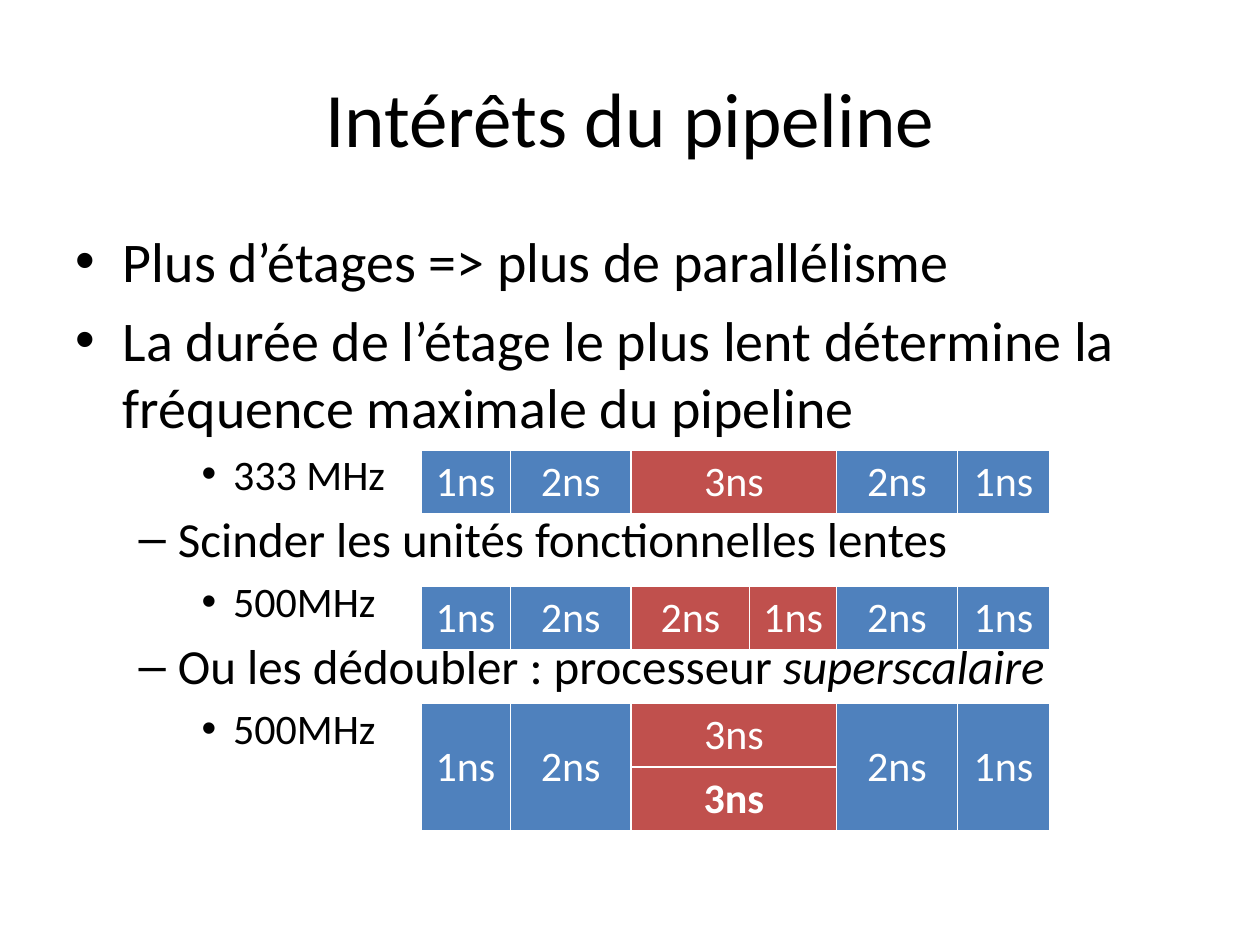
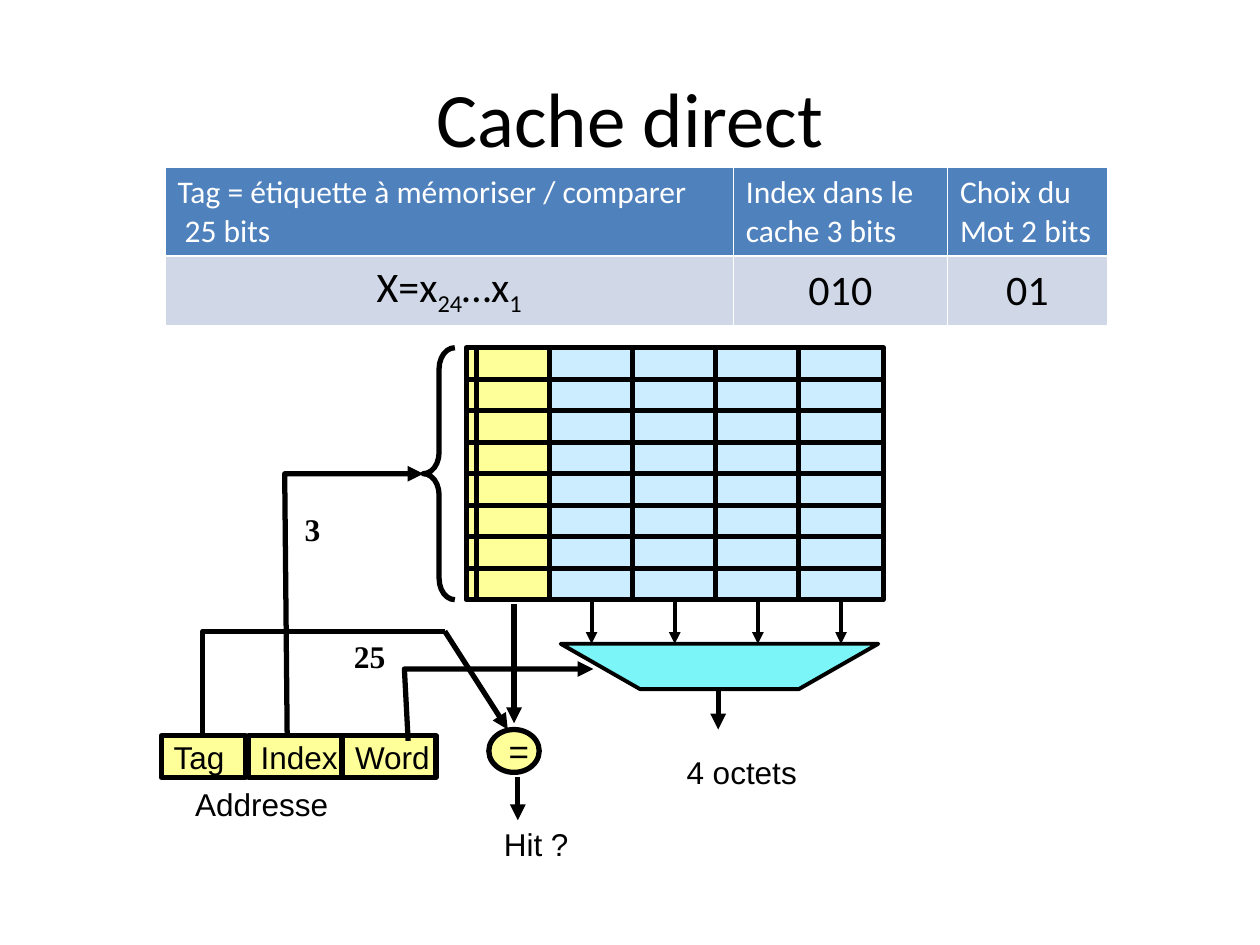
from lxml import etree
from pptx import Presentation
from pptx.dml.color import RGBColor
from pptx.enum import shapes, text
from pptx.oxml.ns import qn
from pptx.util import Inches, Pt

rgb = RGBColor.from_string
BLACK, WHITE = "000000", "FFFFFF"
BLUE, RED, PALE = "4F81BD", "C0504D", "D0D8E8"
YELLOW, SKY, CYAN = "FFFF99", "CCECFF", "7CF5F8"
RECT = shapes.MSO_SHAPE.RECTANGLE
CENTER, LEFT = text.PP_ALIGN.CENTER, text.PP_ALIGN.LEFT


def draw(s, fill=None, width=3, arrow=False):
    """Black outline, optional fill and arrowhead, no shadow."""
    s.line.color.rgb = rgb(BLACK)
    s.line.width = Pt(width)
    if fill:
        s.fill.solid()
        s.fill.fore_color.rgb = rgb(fill)
    elif hasattr(s, "fill"):
        s.fill.background()
    spPr = s._element.spPr
    if arrow:
        etree.SubElement(spPr.find(qn("a:ln")), qn("a:tailEnd"), type="triangle")
    etree.SubElement(spPr, qn("a:effectLst"))


def set_cell(cell, content, fill, size=24, color=WHITE, align=CENTER, bold=False):
    cell.fill.solid()
    cell.fill.fore_color.rgb = rgb(fill)
    cell.vertical_anchor = text.MSO_ANCHOR.MIDDLE
    cell.text_frame.text = content
    for p in cell.text_frame.paragraphs:
        p.alignment = align
        p.font.name, p.font.size, p.font.bold = "Calibri", Pt(size), bold
        p.font.color.rgb = rgb(color)


prs = Presentation()
prs.slide_width, prs.slide_height = Inches(10), Inches(7.5)

# Slides and their titles
pipeline = prs.slides.add_slide(prs.slide_layouts[1])
cache = prs.slides.add_slide(prs.slide_layouts[5])
for slide, title in ((pipeline, "Intérêts du pipeline"), (cache, "Cache direct")):
    s = slide.shapes.title
    s.left, s.top, s.width, s.height = Inches(0.5), Inches(0.3), Inches(9), Inches(1.25)
    s.text_frame.text = title
    p = s.text_frame.paragraphs[0]
    p.alignment = CENTER
    p.font.name, p.font.size = "Calibri", Pt(44)
    p.font.color.rgb = rgb(BLACK)

# Slide 1: bullets
body = pipeline.placeholders[1]
body.left, body.top, body.width, body.height = Inches(0.5), Inches(1.75), Inches(9), Inches(4.95)
tf = body.text_frame
bullets = [
    (0, "Plus d’étages => plus de parallélisme"),
    (0, "La durée de l’étage le plus lent détermine la fréquence maximale du pipeline"),
    (2, "333 MHz"),
    (1, "Scinder les unités fonctionnelles lentes"),
    (2, "500MHz"),
    (1, "Ou les dédoubler : processeur "),
    (2, "500MHz"),
]
for i, (level, content) in enumerate(bullets):
    p = tf.add_paragraph() if i else tf.paragraphs[0]
    p.level = level
    p.add_run().text = content
    p.font.name, p.font.size = "Calibri", Pt(32 - 4 * level)
    p.font.color.rgb = rgb(BLACK)
r = tf.paragraphs[5].add_run()
r.text = "superscalaire"
r.font.italic = True

# Slide 1: stage durations, with the slow stages in red
whole = [0.71, 0.96, 1.63, 0.96, 0.73]
split = [0.71, 0.96, 0.94, 0.69, 0.96, 0.73]
pipelines = [
    (3.57, whole, ["1ns", "2ns", "3ns", "2ns", "1ns"], 1),
    (4.65, split, ["1ns", "2ns", "2ns", "1ns", "2ns", "1ns"], 1),
    (5.58, whole, ["1ns", "2ns", "3ns", "2ns", "1ns"], 2),
]
for top, widths, stages, rows in pipelines:
    table = pipeline.shapes.add_table(rows, len(widths), Inches(3.34), Inches(top),
                                      Inches(sum(widths)), Inches(0.5 * rows)).table
    for col, (width, stage) in enumerate(zip(widths, stages)):
        table.columns[col].width = Inches(width)
        slow = 2 <= col < len(widths) - 2
        set_cell(table.cell(0, col), stage, RED if slow else BLUE)
        if rows == 2 and slow:
            set_cell(table.cell(1, col), stage, RED, bold=True)
        elif rows == 2:
            table.cell(0, col).merge(table.cell(1, col))

# Slide 2: cache lines, a tag column and four word columns
last_cells = []
for col in range(5):
    for row in range(8):
        s = cache.shapes.add_shape(RECT, Inches(3.7 + 0.66 * col), Inches(2.76 + 0.25 * row),
                                   Inches(0.67), Inches(0.25))
        draw(s, SKY if col else YELLOW)
    last_cells.append(s)
brace = cache.shapes.add_shape(shapes.MSO_SHAPE.LEFT_BRACE, Inches(3.36), Inches(2.76),
                               Inches(0.25), Inches(2))
brace.adjustments[0] = 0.67
draw(brace)

# Slide 2: address fields, comparator and labels
labels = [
    ("Tag", 1.28, 5.84, 0.67, 0.33, RECT, 18, "Arial"),
    ("Index", 1.97, 5.84, 0.74, 0.33, RECT, 18, "Arial"),
    ("Word", 2.72, 5.84, 0.74, 0.33, RECT, 18, "Arial"),
    ("=", 3.88, 5.79, 0.4, 0.34, shapes.MSO_SHAPE.OVAL, 20, "Arial"),
    ("Addresse", 1.45, 6.18, 1.28, 0.4, None, 18, "Arial"),
    ("Hit ?", 3.9, 6.5, 0.72, 0.4, None, 18, "Arial"),
    ("4 octets", 5.35, 5.93, 1.09, 0.4, None, 18, "Arial"),
    ("3", 2.32, 4, 0.33, 0.4, None, 18, "Times New Roman"),
    ("25", 2.71, 5.01, 0.45, 0.4, None, 18, "Times New Roman"),
]
for content, x, y, w, h, kind, size, font in labels:
    box = Inches(x), Inches(y), Inches(w), Inches(h)
    if kind:
        s = cache.shapes.add_shape(kind, *box)
        draw(s, YELLOW)
    else:
        s = cache.shapes.add_textbox(*box)
    tf = s.text_frame
    tf.word_wrap = False
    tf.text = content
    p = tf.paragraphs[0]
    p.alignment = LEFT
    p.font.name, p.font.size, p.font.bold = font, Pt(size), font != "Arial"
    p.font.color.rgb = rgb(BLACK)

# Slide 2: straight lines (the first divides the tag column)
for x1, y1, x2, y2, arrow in [
    (3.78, 2.76, 3.78, 4.76, False),
    (4.08, 4.79, 4.08, 5.74, True),
    (5.7, 5.43, 5.7, 5.79, True),
    (3.53, 5.01, 4.03, 5.79, True),
    (4.11, 6.17, 4.11, 6.51, True),
]:
    s = cache.shapes.add_connector(shapes.MSO_CONNECTOR.STRAIGHT, Inches(x1), Inches(y1),
                                   Inches(x2), Inches(y2))
    draw(s, arrow=arrow)

# Slide 2: bent lines and the multiplexer
for points, close, fill, width, arrow in [
    ([(2.28, 5.84), (2.26, 3.76), (3.36, 3.76)], False, None, 3, True),
    ([(1.61, 5.84), (1.61, 5.01), (3.53, 5.01)], False, None, 3, False),
    ([(3.24, 5.88), (3.21, 5.31), (4.71, 5.31)], False, None, 3, True),
    ([(4.45, 5.11), (5.08, 5.47), (6.34, 5.47), (6.97, 5.11)], True, CYAN, 2.25, False),
]:
    start, *others = [(Inches(x), Inches(y)) for x, y in points]
    builder = cache.shapes.build_freeform(*start)
    builder.add_line_segments(others, close=close)
    draw(builder.convert_to_shape(), fill, width, arrow)

# Slide 2: arrows from the word columns to the multiplexer
for cell in last_cells[1:]:
    x = cell.left + cell.width // 2
    s = cache.shapes.add_connector(shapes.MSO_CONNECTOR.STRAIGHT, x, Inches(4.76), x, Inches(5.11))
    s.begin_connect(cell, 2)
    draw(s, width=2.25, arrow=True)

# Slide 2: address layout table
fields = [
    (4.51, "Tag = étiquette à mémoriser / comparer\n 25 bits", ""),
    (1.7, "Index dans le cache 3 bits", "010"),
    (1.27, "Choix du Mot 2 bits", "01"),
]
table = cache.shapes.add_table(2, 3, Inches(1.31), Inches(1.33), Inches(7.48), Inches(1.25)).table
table.rows[0].height, table.rows[1].height = Inches(0.7), Inches(0.55)
for col, (width, name, value) in enumerate(fields):
    table.columns[col].width = Inches(width)
    set_cell(table.cell(0, col), name, BLUE, 18, align=LEFT)
    set_cell(table.cell(1, col), value, PALE, color=BLACK)
p = table.cell(1, 0).text_frame.paragraphs[0]
for content, lowered in (("X=x", False), ("24", True), ("…x", False), ("1", True)):
    r = p.add_run()
    r.text = content
    if lowered:
        r.font._element.set("baseline", "-25000")

prs.save("out.pptx")
